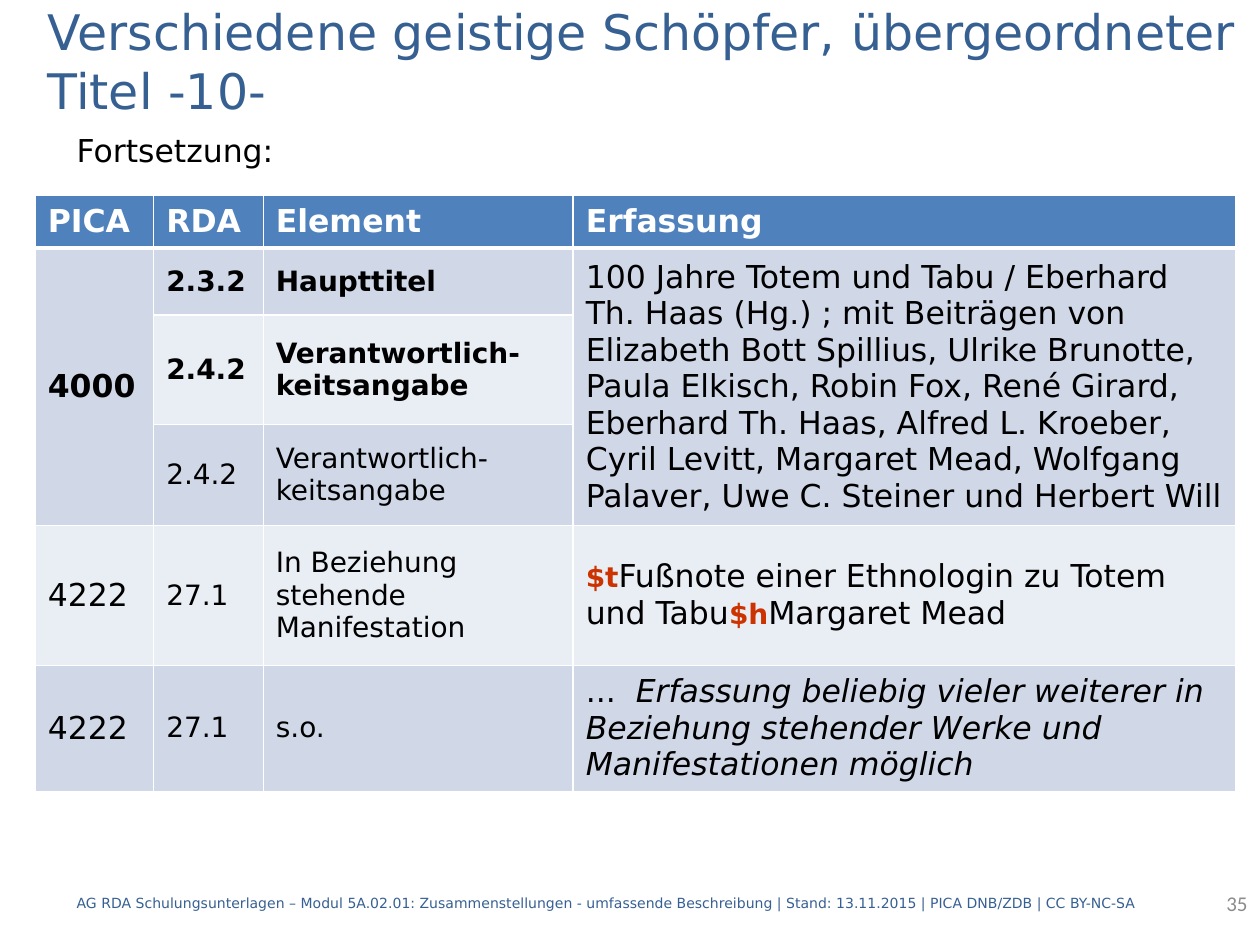
import pptx
import pptx.util
import pptx.dml.color
import pptx.enum.text
import pptx.oxml
import pptx.oxml.ns

Inches = pptx.util.Inches
Pt = pptx.util.Pt
Anchor = pptx.enum.text.MSO_ANCHOR
Align = pptx.enum.text.PP_ALIGN
Fit = pptx.enum.text.MSO_AUTO_SIZE

COLORS = {"blue": "376092", "head": "4F81BD", "dark": "D0D8E8",
          "light": "E9EDF4", "white": "FFFFFF", "black": "000000",
          "red": "CC3300", "gray": "8C8C8C"}
FONT = "DejaVu Sans"
COLS = [0.94, 0.87, 2.46, 5.26]
ROWS = [0.42, 0.53, 0.87, 0.74, 1.11, 0.42]
HEADS = ["PICA", "RDA", "Element", "Erfassung"]


def rgb(name):
    return pptx.dml.color.RGBColor.from_string(COLORS[name])


def add_run(para, text, size, color="black", bold=False, italic=False, face=FONT):
    run = para.add_run()
    run.text = text
    font = run.font
    font.name, font.size = face, Pt(size)
    font.bold, font.italic = bold, italic
    font.color.rgb = rgb(color)


def add_title(slide, box):
    title = slide.shapes.title
    title.left, title.top, title.width, title.height = map(Inches, box)
    frame = title.text_frame
    frame.word_wrap, frame.auto_size = True, Fit.NONE
    frame.vertical_anchor = Anchor.MIDDLE
    para = frame.paragraphs[0]
    para.alignment = Align.LEFT
    add_run(para, "Verschiedene geistige Schöpfer, übergeordneter Titel -10-",
            28, "blue")


def add_label(slide, box, text, size, color, face=FONT, align=Align.LEFT,
              anchor=Anchor.MIDDLE, wrap=True):
    label = slide.shapes.add_textbox(*map(Inches, box))
    frame = label.text_frame
    frame.word_wrap, frame.vertical_anchor = wrap, anchor
    para = frame.paragraphs[0]
    para.alignment = align
    add_run(para, text, size, color, face=face)
    return label


def set_lines(cell, base):
    """White cell borders; base is the width of the bottom one in points."""
    props = cell._tc.get_or_add_tcPr()
    for spot, side in enumerate("LRTB"):
        width = Pt(base if side == "B" else 1)
        line = pptx.oxml.parse_xml(
            f'<a:ln{side} {pptx.oxml.ns.nsdecls("a")} w="{width}"><a:solidFill>'
            f'<a:srgbClr val="{COLORS["white"]}"/></a:solidFill></a:ln{side}>')
        props.insert(spot, line)


def fill_cell(cell, runs, before=6, after=6):
    para = cell.text_frame.paragraphs[0]
    if before or after:
        para.space_before, para.space_after = Pt(before), Pt(after)
    for text, size, *style in runs:
        add_run(para, text, size, *style)


def add_grid(slide, box):
    table = slide.shapes.add_table(len(ROWS), len(COLS), *map(Inches, box)).table
    for col, width in zip(table.columns, COLS):
        col.width = Inches(width)
    for row, height in zip(table.rows, ROWS):
        row.height = Inches(height)

    # Banded fills and borders
    for r in range(len(ROWS)):
        for c in range(len(COLS)):
            cell = table.cell(r, c)
            cell.vertical_anchor = Anchor.MIDDLE
            tone = "head" if r == 0 else "dark" if r % 2 else "light"
            cell.fill.solid()
            cell.fill.fore_color.rgb = rgb(tone)
            set_lines(cell, 1 if r else 3)
    for c in (0, 3):
        table.cell(1, c).merge(table.cell(3, c))

    # Header
    for c, text in enumerate(HEADS):
        fill_cell(table.cell(0, c), [(text, 18, "white", True)], 0, 0)

    # PICA, RDA and element columns
    for r, text, bold in [(1, "4000", True), (4, "4222", False), (5, "4222", False)]:
        fill_cell(table.cell(r, 0), [(text, 18, "black", bold)])
    pairs = [("2.3.2", "Haupttitel"),
             ("2.4.2", "Verantwortlich-keitsangabe"),
             ("2.4.2", "Verantwortlich-keitsangabe"),
             ("27.1", "In Beziehung stehende Manifestation"),
             ("27.1", "s.o.")]
    for r, pair in enumerate(pairs, 1):
        for c, text in enumerate(pair, 1):
            fill_cell(table.cell(r, c), [(text, 16, "black", r < 3)])

    # Recorded data
    fill_cell(table.cell(1, 3), [(
        "100 Jahre Totem und Tabu / Eberhard Th. Haas (Hg.) ; mit Beiträgen von "
        "Elizabeth Bott Spillius, Ulrike Brunotte, Paula Elkisch, Robin Fox, "
        "René Girard, Eberhard Th. Haas, Alfred L. Kroeber, Cyril Levitt, "
        "Margaret Mead, Wolfgang Palaver, Uwe C. Steiner und Herbert Will", 18)])
    note = table.cell(4, 3)
    note.margin_top = note.margin_bottom = 0
    fill_cell(note, [("$t", 16, "red", True),
                     ("Fußnote einer Ethnologin zu Totem und Tabu", 18),
                     ("$h", 16, "red", True),
                     ("Margaret Mead", 18)], before=0)
    fill_cell(table.cell(5, 3), [
        ("...", 18),
        ("  Erfassung beliebig vieler weiterer in Beziehung stehender Werke "
         "und Manifestationen möglich", 18, "black", False, True)])


def main():
    deck = pptx.Presentation()
    deck.slide_width, deck.slide_height = Inches(10), Inches(7.5)
    slide = deck.slides.add_slide(deck.slide_layouts[5])

    add_title(slide, (0.28, 0.2, 9.72, 0.56))
    label = add_label(slide, (0.51, 0.99, 1.81, 0.4), "Fortsetzung:", 18, "black",
                      anchor=Anchor.TOP, wrap=False)
    label.fill.solid()
    label.fill.fore_color.rgb = rgb("white")
    label.text_frame.auto_size = Fit.SHAPE_TO_FIT_TEXT

    # Footer and page number
    add_label(slide, (0.51, 6.97, 9.13, 0.4),
              "AG RDA Schulungsunterlagen – Modul 5A.02.01: Zusammenstellungen - "
              "umfassende Beschreibung | Stand: 13.11.2015 | PICA DNB/ZDB | "
              "CC BY-NC-SA", 8, "blue")
    add_label(slide, (7.91, 6.97, 2.09, 0.4), "35", 12, "gray", "Calibri",
              Align.RIGHT)

    add_grid(slide, (0.28, 1.55, sum(COLS), sum(ROWS)))
    deck.save("out.pptx")


if __name__ == "__main__":
    main()
